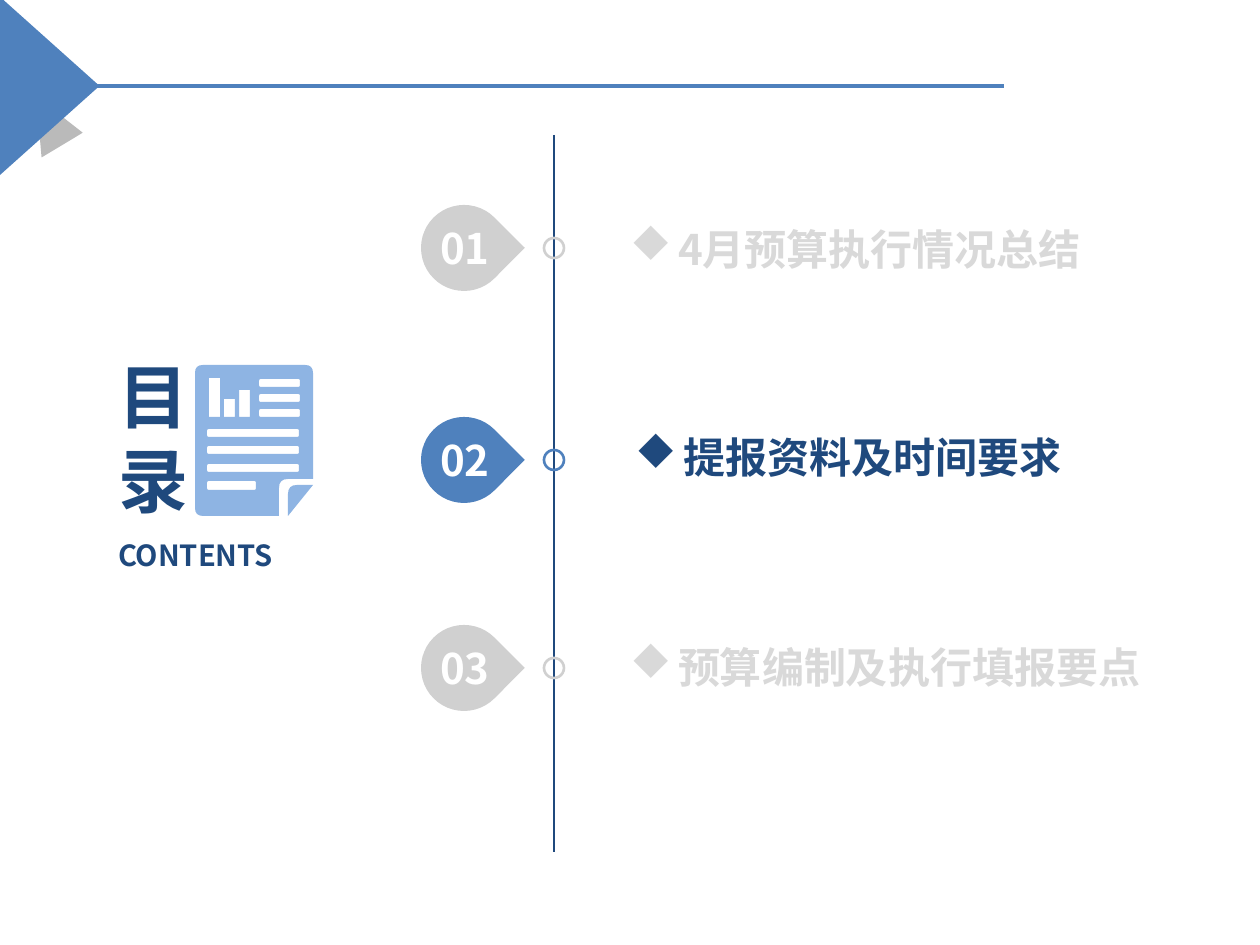
import math

from lxml import etree
from pptx import Presentation, util as u
from pptx.dml.color import RGBColor
from pptx.enum import shapes, text
from pptx.oxml.ns import qn

PX = 914400 / 126
FONT = "Noto Sans CJK SC"
BLUE = RGBColor(0x4F, 0x81, 0xBD)
NAVY = RGBColor(0x1F, 0x49, 0x7D)
ICON_BLUE = RGBColor(0x8E, 0xB4, 0xE3)
SHADOW_GRAY = RGBColor(0x40, 0x40, 0x40)
MARKER_GRAY = RGBColor(0xD0, 0xD0, 0xD0)
TEXT_GRAY = RGBColor(0xD9, 0xD9, 0xD9)
WHITE = RGBColor(0xFF, 0xFF, 0xFF)

presentation = Presentation()
presentation.slide_width, presentation.slide_height = u.Inches(10), u.Inches(7.5)
slide = presentation.slides.add_slide(presentation.slide_layouts[6])


def add_shape(kind, box, fill=None, line=None, rotation=0):
    shape = slide.shapes.add_shape(kind, *(round(v * PX) for v in box))
    shape.shadow.inherit = False
    shape.rotation = rotation
    if fill is None:
        shape.fill.background()
    else:
        shape.fill.solid()
        shape.fill.fore_color.rgb = fill
    if line is None:
        shape.line.fill.background()
    else:
        shape.line.color.rgb = line
        shape.line.width = u.Pt(1.5)
    return shape


def add_text(words, box, size=24, color=NAVY, align=None, anchor=text.MSO_ANCHOR.TOP,
             diamond=False):
    """Add bold text in a box; diamond puts a Wingdings diamond bullet before it."""
    box_shape = slide.shapes.add_textbox(*(round(v * PX) for v in box))
    frame = box_shape.text_frame
    frame.word_wrap = True
    frame.vertical_anchor = anchor
    frame.margin_left = frame.margin_top = frame.margin_right = frame.margin_bottom = 0
    paragraph = frame.paragraphs[0]
    paragraph.alignment = align
    if diamond:
        properties = paragraph._p.get_or_add_pPr()
        indent = round(48 * PX)
        properties.set("marL", str(indent))
        properties.set("indent", str(-indent))
        bullet_font = etree.SubElement(properties, qn("a:buFont"))
        bullet_font.set("typeface", "Wingdings")
        bullet_font.set("charset", "2")
        etree.SubElement(properties, qn("a:buChar")).set("char", "u")
    run = paragraph.add_run()
    run.text = words
    run.font.size = u.Pt(size)
    run.font.bold = True
    run.font.color.rgb = color
    run.font.name = FONT
    etree.SubElement(run._r.get_or_add_rPr(), qn("a:ea")).set("typeface", FONT)


# Corner ornament
TRIANGLE = shapes.MSO_SHAPE.ISOSCELES_TRIANGLE
fold = add_shape(TRIANGLE, (24, 94, 48, 55), SHADOW_GRAY, rotation=329)
fold.adjustments[0] = 0.56
fold_color = fold.fill._xPr.find(qn("a:solidFill"))[0]
etree.SubElement(fold_color, qn("a:alpha")).set("val", "36000")
add_shape(TRIANGLE, (-40, 36, 179, 100), BLUE, rotation=90)

# Header rule and vertical timeline
for ends, color, width in (((97, 86, 1004, 86), BLUE, 2), ((554, 135, 554, 852), NAVY, 0.75)):
    line = slide.shapes.add_connector(shapes.MSO_CONNECTOR.STRAIGHT,
                                      *(round(v * PX) for v in ends))
    line.line.color.rgb = color
    line.line.width = u.Pt(width)
    etree.SubElement(line._element.spPr, qn("a:effectLst"))

# Contents title
add_text("CONTENTS", (118, 538, 194, 34), size=16.6, align=text.PP_ALIGN.JUSTIFY,
         anchor=text.MSO_ANCHOR.MIDDLE)
add_text("目录", (119, 354, 62, 174), size=40, align=text.PP_ALIGN.CENTER)

# Report icon: each contour is a list of corners (x, y, radius)
contours = [
    [(195, 365, 8), (313, 365, 8), (313, 479, 0), (279, 479, 9), (279, 516, 0), (195, 516, 8)],
    [(288, 485, 9), (313, 485, 0), (288, 516, 0)],
]
cutouts = [(209, 378, 220, 417, 0), (224, 399, 235, 417, 0), (239, 390, 250, 417, 0)]
cutouts += [(259, top, 300, top + 8, 2) for top in (379, 394, 409)]
cutouts += [(207, top, 299, top + 8, 2) for top in (429, 446, 464)]
cutouts += [(207, 481, 256, 490, 2)]
for left, top, right, bottom, radius in cutouts:
    contours.append([(left, top, radius), (left, bottom, radius),
                     (right, bottom, radius), (right, top, radius)])

builder = None
for corners in contours:
    points = []
    for i, (x, y, radius) in enumerate(corners):
        if not radius:
            points.append((x * PX, y * PX))
            continue
        tangents = []
        for other_x, other_y, _ in (corners[i - 1], corners[(i + 1) % len(corners)]):
            share = radius / math.hypot(other_x - x, other_y - y)
            tangents.append((x + (other_x - x) * share, y + (other_y - y) * share))
        (x0, y0), (x1, y1) = tangents
        for t in (0, 0.25, 0.5, 0.75, 1):
            a, b, c = (1 - t) ** 2, 2 * t * (1 - t), t ** 2
            points.append(((a * x0 + b * x + c * x1) * PX, (a * y0 + b * y + c * y1) * PX))
    if builder is None:
        builder = slide.shapes.build_freeform(*points[0])
    else:
        builder.move_to(*points[0])
    builder.add_line_segments(points[1:], close=True)
icon = builder.convert_to_shape()
icon.shadow.inherit = False
icon.fill.solid()
icon.fill.fore_color.rgb = ICON_BLUE
icon.line.fill.background()

# Agenda entries: number, centre of marker, title, left and bottom of title, colours
entries = [
    ("01", 248, "4月预算执行情况总结", 630, 274, MARKER_GRAY, TEXT_GRAY),
    ("02", 460, "提报资料及时间要求", 635, 482, BLUE, NAVY),
    ("03", 668, "预算编制及执行填报要点", 630, 692, MARKER_GRAY, TEXT_GRAY),
]
for number, center, title, left, bottom, marker_color, title_color in entries:
    add_shape(shapes.MSO_SHAPE.OVAL, (544, center - 10, 20, 20), line=marker_color)
    add_shape(shapes.MSO_SHAPE.TEAR, (421, center - 43, 86, 86), marker_color, rotation=44.9)
    add_text(number, (424, center - 41, 82, 82), color=WHITE,
             align=text.PP_ALIGN.CENTER, anchor=text.MSO_ANCHOR.MIDDLE)
    add_text(title, (left, bottom - 61, 560, 61), color=title_color, diamond=True,
             anchor=text.MSO_ANCHOR.BOTTOM)

presentation.save("out.pptx")
